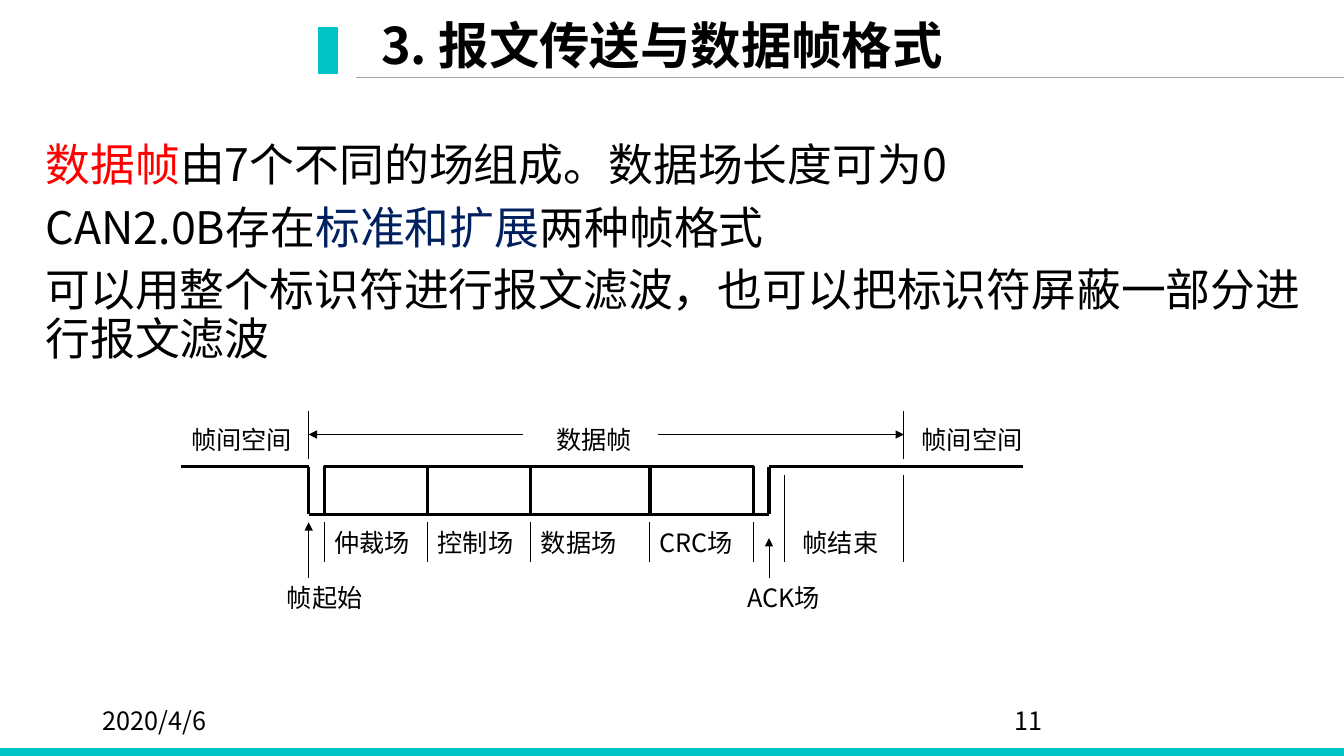
"""Build the slide on message transfer and the data frame format."""
from dataclasses import dataclass
from itertools import pairwise

from lxml import etree
from pptx import Presentation
from pptx.dml.color import RGBColor
from pptx.enum.shapes import MSO_CONNECTOR as Link, MSO_SHAPE as Preset
from pptx.enum.text import MSO_ANCHOR as Anchor, MSO_AUTO_SIZE as AutoSize, PP_ALIGN as Align
from pptx.oxml.ns import qn
from pptx.util import Cm, Pt

SANS, BODY_SANS = "Noto Sans CJK SC", "Noto Sans CJK JP"
BLACK, TEAL, GREY, RED, NAVY = "000000", "02C4C7", "A5A5A5", "FF0000", "002060"
THIN, THICK = 0.75, 2.25


@dataclass
class Label:
    text: str
    left: float
    top: float
    width: float


@dataclass
class Field:
    name: str
    width: float


@dataclass
class Line:
    x1: float
    y1: float
    x2: float
    y2: float
    weight: float = THIN
    arrow: bool = False
    color: str = BLACK


def rgb(value: str) -> RGBColor:
    return RGBColor.from_string(value)


def add_run(paragraph, text: str, size: float, face: str = SANS,
            color: str = BLACK, bold: bool = False) -> None:
    run = paragraph.add_run()
    run.text = text
    for key, value in {"size": Pt(size), "name": face, "bold": bold}.items():
        setattr(run.font, key, value)
    run.font.color.rgb = rgb(color)
    latin = run.font._element.find(qn("a:latin"))
    east_asian = etree.Element(qn("a:ea"), typeface=face)
    latin.addnext(east_asian)


def add_text_frame(slide, left: float, top: float, width: float, height: float):
    frame = slide.shapes.add_textbox(Cm(left), Cm(top), Cm(width), Cm(height)).text_frame
    for key, value in {"word_wrap": True, "auto_size": AutoSize.NONE}.items():
        setattr(frame, key, value)
    return frame


def draw_label(slide, label: Label) -> None:
    frame = add_text_frame(slide, label.left, label.top, label.width, 1.02)
    add_run(frame.paragraphs[0], label.text, 18)


def draw_line(slide, line: Line) -> None:
    connector = slide.shapes.add_connector(
        Link.STRAIGHT, Cm(line.x1), Cm(line.y1), Cm(line.x2), Cm(line.y2))
    connector.line.width = Pt(line.weight)
    connector.line.color.rgb = rgb(line.color)
    properties = connector._element.spPr
    if line.arrow:
        etree.SubElement(properties.find(qn("a:ln")), qn("a:tailEnd"), type="triangle")
    etree.SubElement(properties, qn("a:effectLst"))


def draw_box(slide, left: float, top: float, width: float, height: float,
             fill: str | None, outline: str | None = None, weight: float = 1) -> None:
    box = slide.shapes.add_shape(Preset.RECTANGLE, Cm(left), Cm(top), Cm(width), Cm(height))
    box.shadow.inherit = False
    if fill:
        box.fill.solid()
        box.fill.fore_color.rgb = rgb(fill)
    else:
        box.fill.background()
    if outline:
        box.line.color.rgb = rgb(outline)
        box.line.width = Pt(weight)
    else:
        box.line.fill.background()


def draw_heading(slide) -> None:
    draw_box(slide, 0, 18.85, 33.93, 0.23, TEAL)
    draw_line(slide, Line(8.97, 1.96, 33.87, 1.96, 0.5, color=GREY))
    draw_box(slide, 8.03, 0.71, 0.48, 1.14, TEAL, TEAL)
    title = slide.shapes.title
    for key, value in {"left": 9.35, "top": 0.33, "width": 22.83, "height": 1.78}.items():
        setattr(title, key, Cm(value))
    for key, value in {"vertical_anchor": Anchor.MIDDLE, "word_wrap": True,
                       "auto_size": AutoSize.NONE}.items():
        setattr(title.text_frame, key, value)
    heading = title.text_frame.paragraphs[0]
    for key, value in {"alignment": Align.LEFT, "line_spacing": 0.9}.items():
        setattr(heading, key, value)
    add_run(heading, "3. 报文传送与数据帧格式", 36, bold=True)


def draw_statements(slide) -> None:
    statements = [
        [("数据帧", RED), ("由7个不同的场组成。数据场长度可为0", BLACK)],
        [("CAN2.0B存在", BLACK), ("标准和扩展", NAVY), ("两种帧格式", BLACK)],
        [("可以用整个标识符进行报文滤波，也可以把标识符屏蔽一部分进行报文滤波", BLACK)],
    ]
    frame = add_text_frame(slide, 0.9, 3.48, 32.95, 13.59)
    for index, pieces in enumerate(statements):
        paragraph = frame.add_paragraph() if index else frame.paragraphs[0]
        paragraph.line_spacing = 0.9
        paragraph.space_before = Pt(10 if index else 0)
        for text, color in pieces:
            add_run(paragraph, text, 32, BODY_SANS, color)


def draw_frame_diagram(slide) -> None:
    step = 0.4
    idle_start, frame_start = 4.57, 7.78
    high, low = 11.76, 12.96
    tick_top, tick_end = low + step / 2, low + 3 * step
    marker_top, marker_end = high - 3.5 * step, high - step / 2
    span_y, caption_top, note_top = 10.95, 10.56, low + 4 * step

    fields = [Field("仲裁场", 2.6), Field("控制场", 2.6), Field("数据场", 3), Field("CRC场", 2.6)]
    first_field = edge = frame_start + step
    for field in fields:
        draw_box(slide, edge, high, field.width, low - high, None, BLACK, THICK)
        draw_label(slide, Label(field.name, edge, tick_top, field.width))
        draw_line(slide, Line(edge, tick_top, edge, tick_end))
        edge += field.width
    ack = edge + step
    end_start = ack + step
    frame_end = end_start + 3
    idle_end = frame_end + 3

    levels = [
        [(first_field, low), (frame_start, low), (frame_start, high), (idle_start, high)],
        [(edge, low), (ack, low), (ack, high), (idle_end, high)],
    ]
    for level in levels:
        for begin, end in pairwise(level):
            draw_line(slide, Line(*begin, *end, THICK))

    for line in [
        Line(edge, tick_top, edge, tick_end),
        Line(end_start, high + step / 2, end_start, tick_end),
        Line(frame_end, high + step / 2, frame_end, tick_end),
        Line(frame_start, marker_end, frame_start, marker_top),
        Line(frame_end, marker_end, frame_end, marker_top),
        Line(frame_start, note_top, frame_start, tick_top, arrow=True),
        Line(ack, note_top, ack, low + 1.5 * step, arrow=True),
        Line(13.18, span_y, frame_start, span_y, arrow=True),
        Line(16.59, span_y, frame_end, span_y, arrow=True),
    ]:
        draw_line(slide, line)

    for label in [
        Label("帧间空间", idle_start, caption_top, 3.2),
        Label("数据帧", 13.77, caption_top, 3),
        Label("帧间空间", frame_end + step / 2, caption_top, 3.2),
        Label("帧结束", end_start + step / 2, tick_top, 2.6),
        Label("帧起始", frame_start - 2 * step, note_top, 2.6),
        Label("ACK场", ack - 2 * step, note_top, 2.6),
    ]:
        draw_label(slide, label)


def main() -> None:
    deck = Presentation()
    deck.slide_width, deck.slide_height = Cm(33.87), Cm(19.05)
    slide = deck.slides.add_slide(deck.slide_layouts[5])
    draw_heading(slide)
    for footer in [Label("11", 25.32, 17.65, 7.62), Label("2020/4/6", 2.34, 17.65, 7.62)]:
        draw_label(slide, footer)
    draw_statements(slide)
    draw_frame_diagram(slide)
    deck.save("out.pptx")


if __name__ == "__main__":
    main()
